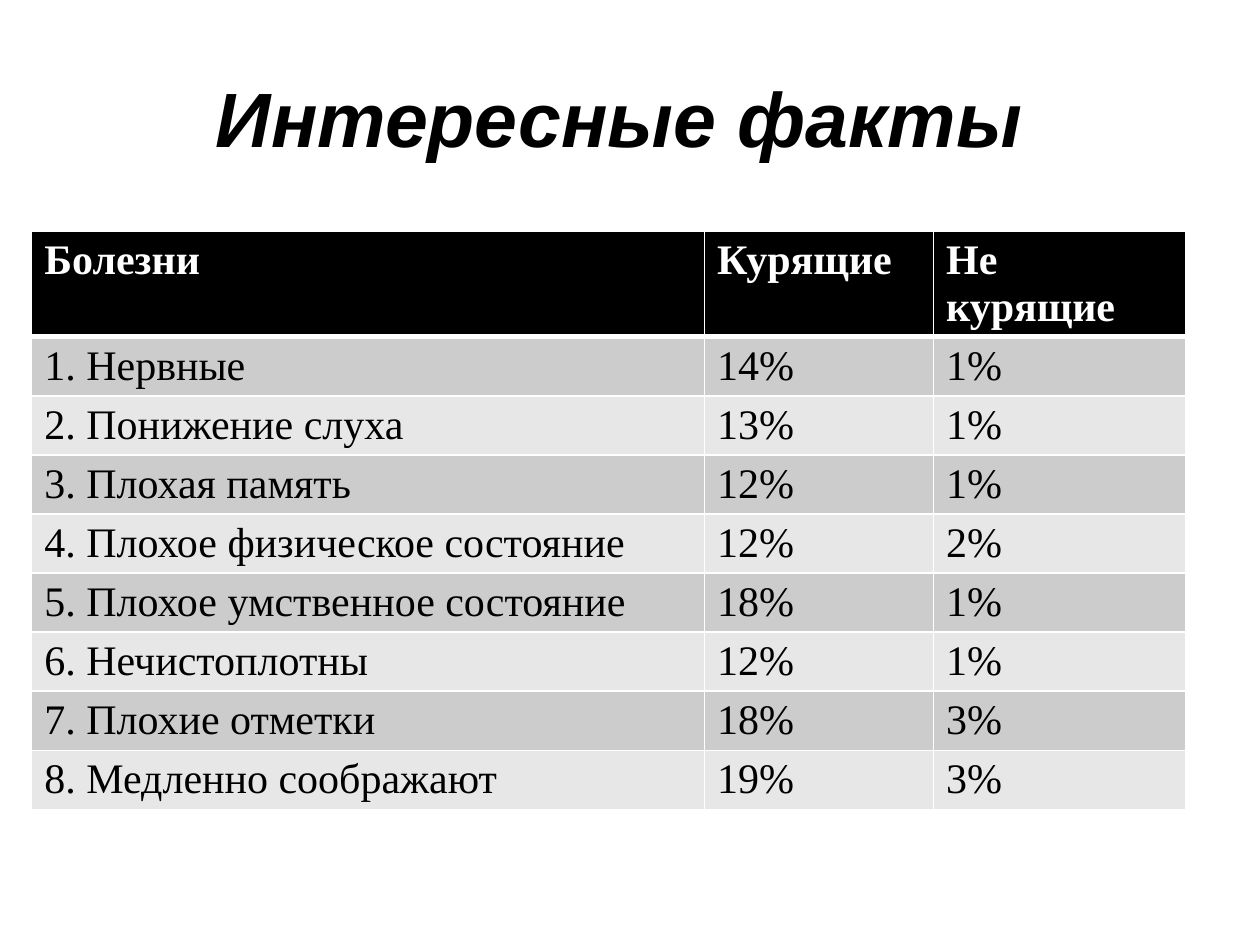
from lxml.etree import SubElement
from pptx import Presentation
from pptx.dml.color import RGBColor as Color
from pptx.enum.text import MSO_ANCHOR as Anchor, PP_ALIGN as Align
from pptx.oxml.ns import qn
from pptx.util import Cm, Pt

COLORS = {"black": "000000", "white": "FFFFFF", "odd": "CCCCCC", "even": "E7E7E7"}
TITLE_FORMAT = {"name": "Arial", "size": Pt(44), "bold": True, "italic": True}
CELL_FORMAT = {"name": "Times New Roman", "size": Pt(24)}
COLUMN_WIDTHS = (13.56, 4.62, 5.08)
HEADER_HEIGHT, ROW_HEIGHT = 2.08, 1.04
HEADER = ("Болезни", "Курящие", "Не курящие")
DISEASES = (
    ("Нервные", 14, 1),
    ("Понижение слуха", 13, 1),
    ("Плохая память", 12, 1),
    ("Плохое физическое состояние", 12, 2),
    ("Плохое умственное состояние", 18, 1),
    ("Нечистоплотны", 12, 1),
    ("Плохие отметки", 18, 3),
    ("Медленно соображают", 19, 3),
)


class SlideBuilder:
    """Hold the style and the current slide, and add each kind of element."""

    def __init__(self, presentation):
        self.slide = presentation.slides.add_slide(presentation.slide_layouts[5])

    def add_text(self, paragraph, text, color, formats):
        run = paragraph.add_run()
        run.text = text
        for name, value in formats.items():
            setattr(run.font, name, value)
        run.font.color.rgb = Color.from_string(COLORS[color])

    def title(self, text, left, top, width, height):
        shape = self.slide.shapes.title
        box = {"left": left, "top": top, "width": width, "height": height}
        for name, value in box.items():
            setattr(shape, name, Cm(value))
        shape.text_frame.vertical_anchor = Anchor.MIDDLE
        paragraph = shape.text_frame.paragraphs[0]
        paragraph.alignment = Align.CENTER
        self.add_text(paragraph, text, "black", TITLE_FORMAT)

    def borders(self, cell, widths):
        properties = cell._tc.get_or_add_tcPr()
        for side, width in widths.items():
            line = SubElement(properties, qn(f"a:ln{side}"), w=str(Pt(width)))
            fill = SubElement(line, qn("a:solidFill"))
            SubElement(fill, qn("a:srgbClr"), val=COLORS["white"])

    def cell(self, cell, text, row):
        is_header = row == 0
        self.borders(cell, {"L": 1, "R": 1, "T": 3 if row == 1 else 1, "B": 3 if is_header else 1})
        fill = "black" if is_header else ("even", "odd")[row % 2]
        cell.fill.solid()
        cell.fill.fore_color.rgb = Color.from_string(COLORS[fill])
        color = "white" if is_header else "black"
        self.add_text(cell.text_frame.paragraphs[0], text, color, {**CELL_FORMAT, "bold": is_header})

    def table(self, rows, left, top):
        heights = [HEADER_HEIGHT] + [ROW_HEIGHT] * (len(rows) - 1)
        table = self.slide.shapes.add_table(
            len(rows), len(COLUMN_WIDTHS), Cm(left), Cm(top), Cm(sum(COLUMN_WIDTHS)), Cm(sum(heights))
        ).table
        for column, width in zip(table.columns, COLUMN_WIDTHS):
            column.width = Cm(width)
        for index, (row, height, texts) in enumerate(zip(table.rows, heights, rows)):
            row.height = Cm(height)
            for cell, text in zip(row.cells, texts):
                self.cell(cell, text, index)


def main():
    presentation = Presentation()
    presentation.slide_width, presentation.slide_height = Cm(25.4), Cm(19.05)
    builder = SlideBuilder(presentation)
    builder.title("Интересные факты ", 1.27, 0.76, 22.86, 3.18)
    rows = [HEADER] + [
        (f"{number}. {disease}", f"{smokers}%", f"{others}%")
        for number, (disease, smokers, others) in enumerate(DISEASES, 1)
    ]
    builder.table(rows, 0.64, 4.66)
    presentation.save("out.pptx")


if __name__ == "__main__":
    main()
